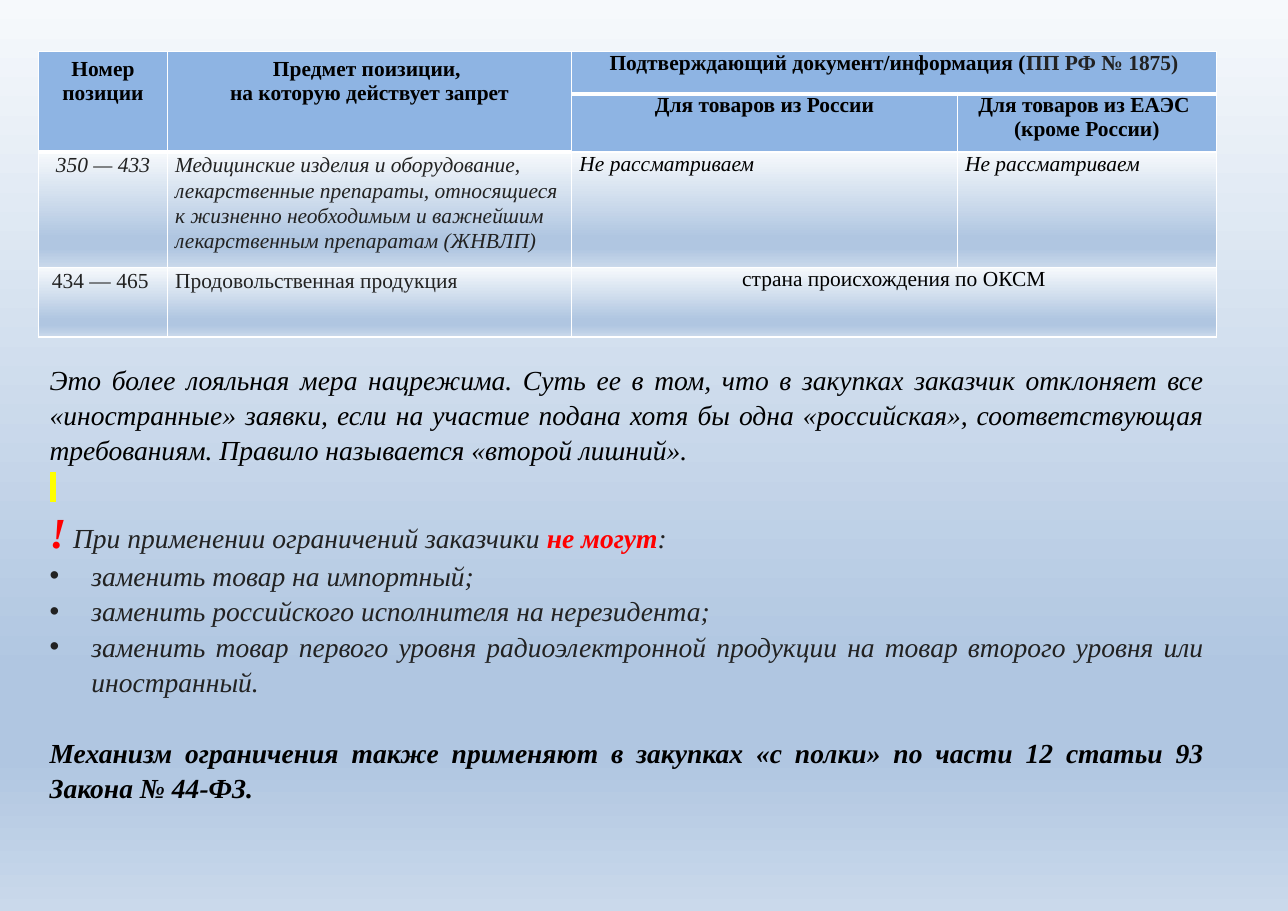
from lxml import etree
from pptx import Presentation
from pptx.dml.color import RGBColor
from pptx.enum import text as t
from pptx.oxml.ns import qn
from pptx.util import Inches, Pt

FONT = "Times New Roman"
HUES = {"black": "000000", "ink": "222222", "red": "FF0000", "head": "8EB4E3",
        "line": "FFFFFF", "mark": "FFFF00"}
STOPS = [(0, "F6F9FC"), (74, "B0C6E1"), (83, "B0C6E1"), (100, "CAD9EB")]
MID, LEFT, JUST = t.PP_ALIGN.CENTER, t.PP_ALIGN.LEFT, t.PP_ALIGN.JUSTIFY

COLS = [1.17, 3.67, 3.5, 2.35]
ROWS = [0.38, 0.44, 1.05, 0.63]
SPANS = [(0, 0, 1, 0), (0, 1, 1, 1), (0, 2, 0, 3), (3, 2, 3, 3)]
CELLS = {
    (0, 0): ("Номер позиции", MID, "black"),
    (0, 1): ("Предмет поизиции, \vна которую действует запрет", MID, "black"),
    (0, 2): ([("Подтверждающий документ/информация (", {"hue": "black"}),
              ("ПП РФ № 1875)", {"hue": "ink"})], MID, None),
    (1, 2): ("Для товаров из России", MID, "black"),
    (1, 3): ("Для товаров из ЕАЭС \n(кроме России)", MID, "black"),
    (2, 0): ("350 — 433", MID, "ink"),
    (2, 1): ("Медицинские изделия и оборудование, лекарственные препараты, "
             "относящиеся к жизненно необходимым и важнейшим "
             "лекарственным препаратам (ЖНВЛП)", LEFT, "ink"),
    (2, 2): ("Не рассматриваем", JUST, "black"),
    (2, 3): ("Не рассматриваем", JUST, "black"),
    (3, 0): ("434 — 465 ", MID, "ink"),
    (3, 1): ("Продовольственная продукция", LEFT, "ink"),
    (3, 2): ("страна происхождения по ОКСМ", MID, "black"),
}
BODY = [
    ("Это более лояльная мера нацрежима. Суть ее в том, что в закупках заказчик "
     "отклоняет все «иностранные» заявки, если на участие подана хотя бы одна "
     "«российская», соответствующая требованиям. Правило называется «второй лишний».",
     "black", {}),
    ([(" ", {"mark": "mark"})], "black", {}),
    ([("!", {"size": 28, "hue": "red", "bold": True}),
      (" При применении ограничений заказчики ", {"hue": "ink"}),
      ("не могут", {"hue": "red", "bold": True}),
      (": ", {"hue": "ink"})], None, {}),
    ("заменить товар на импортный;", "ink", {"dot": True}),
    ("заменить российского исполнителя на нерезидента;", "ink", {"dot": True}),
    ("заменить товар первого уровня радиоэлектронной продукции на товар "
     "второго уровня или иностранный.", "ink", {"dot": True}),
    ("Механизм ограничения также применяют в закупках «с полки» "
     "по части 12 статьи 93 Закона № 44-ФЗ.", "black", {"bold": True, "gap": 23}),
]


def style(font, hue=None, size=None, bold=None, italic=None):
    if size:
        font.size = Pt(size)
    if bold is not None:
        font.bold = bold
    if italic is not None:
        font.italic = italic
    if hue:
        font.color.rgb = RGBColor.from_string(HUES[hue])


def sub(node, tag, **attrs):
    return etree.SubElement(node, qn(tag), attrs)


def fill_in(para, runs):
    for words, look in runs:
        look = dict(look)
        mark = look.pop("mark", None)
        run = para.add_run()
        run.text = words
        style(run.font, **look)
        if mark:
            props = run.font.fill and run._r.get_or_add_rPr()
            sub(sub(props, "a:highlight"), "a:srgbClr", val=HUES[mark])


def grade(fill):
    fill.gradient()
    fill.gradient_angle = 270


def edge(cell, row, base):
    props = cell._tc.get_or_add_tcPr()
    for i, side in enumerate("LRTB"):
        width = 3 if row == 0 and side == "B" else 1
        line = etree.Element(qn("a:ln" + side), w=str(Pt(width)))
        sub(sub(line, "a:solidFill"), "a:srgbClr", val=HUES[base])
        props.insert(i, line)


def add_grid(slide):
    frame = slide.shapes.add_table(len(ROWS), len(COLS), Inches(0.35), Inches(0.47),
                                   Inches(sum(COLS)), Inches(sum(ROWS)))
    grid = frame.table
    for col, width in zip(grid.columns, COLS):
        col.width = Inches(width)
    for row, height in zip(grid.rows, ROWS):
        row.height = Inches(height)
    for top, left, low, right in SPANS:
        grid.cell(top, left).merge(grid.cell(low, right))
    for r in range(len(ROWS)):
        for c in range(len(COLS)):
            cell = grid.cell(r, c)
            if r < 2:
                cell.fill.solid()
                cell.fill.fore_color.rgb = RGBColor.from_string(HUES["head"])
            else:
                grade(cell.fill)
            edge(cell, r, "line")
            if (r, c) != (0, 0) and (r, c) != (0, 1):
                cell.margin_left = cell.margin_right = Inches(0.07)
                cell.margin_top = cell.margin_bottom = 0
            if (r, c) not in CELLS:
                continue
            words, align, hue = CELLS[r, c]
            if isinstance(words, str):
                cell.text_frame.text = words
            else:
                fill_in(cell.text_frame.paragraphs[0], words)
            for para in cell.text_frame.paragraphs:
                para.alignment = align
                if r > 1 and c < 2:
                    para.line_spacing = 1.07
                para.font.name = FONT
                style(para.font, hue, 14, r < 2, r == 2)


def add_body(slide):
    box = slide.placeholders[1]
    box.left, box.top = Inches(0.35), Inches(3.22)
    box.width, box.height = Inches(10.68), Inches(4.61)
    frame = box.text_frame
    frame.word_wrap = True
    frame.auto_size = t.MSO_AUTO_SIZE.NONE
    for i, (words, hue, look) in enumerate(BODY):
        para = frame.add_paragraph() if i else frame.paragraphs[0]
        props = para._p.get_or_add_pPr()
        dent = Inches(0.38) if look.get("dot") else 0
        props.set("marL", str(dent))
        props.set("indent", str(-dent))
        if dent:
            sub(props, "a:buFont", typeface="Arial")
            sub(props, "a:buChar", char="•")
            sub(sub(props, "a:tabLst"), "a:tab", pos=str(Inches(0.5)), algn="l")
        else:
            sub(props, "a:buNone")
        para.alignment = JUST
        para.line_spacing = 1.07
        para.space_before = Pt(look.get("gap", 0))
        para.font.name = FONT
        style(para.font, hue, 18, look.get("bold", False), True)
        fill_in(para, [(words, {})] if isinstance(words, str) else words)


def main():
    deck = Presentation()
    deck.slide_width, deck.slide_height = Inches(11.69), Inches(8.27)
    slide = deck.slides.add_slide(deck.slide_layouts[1])
    title = slide.shapes.title.element
    title.getparent().remove(title)
    grade(slide.background.fill)
    add_grid(slide)
    add_body(slide)
    for stops in slide.element.iter(qn("a:gsLst")):
        for stop in list(stops):
            stops.remove(stop)
        for place, hue in STOPS:
            sub(sub(stops, "a:gs", pos=str(place * 1000)), "a:srgbClr", val=hue)
    deck.save("out.pptx")


if __name__ == "__main__":
    main()
